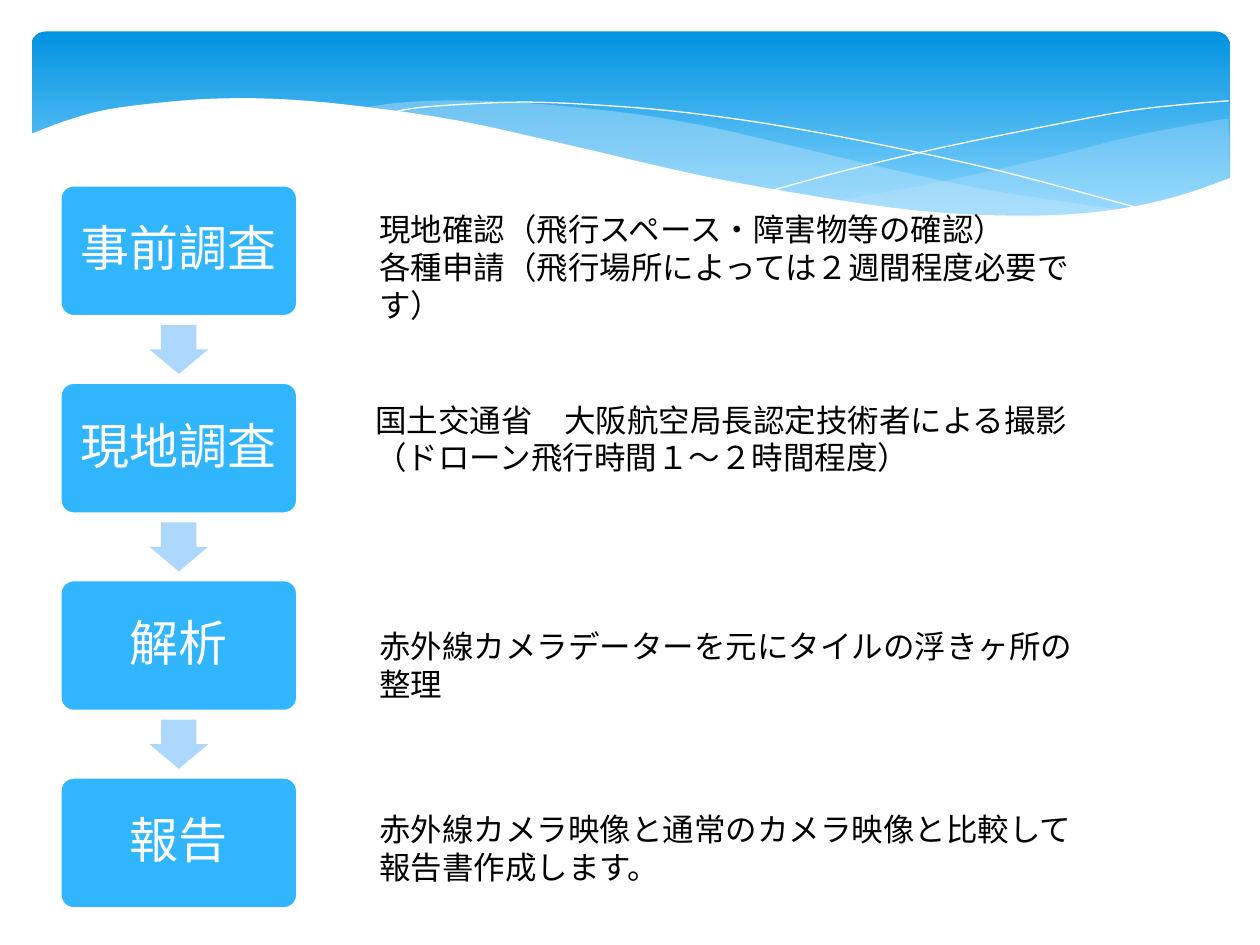
from pptx import Presentation
from pptx.dml.color import RGBColor
from pptx.enum.shapes import MSO_SHAPE as Preset
from pptx.enum.text import MSO_ANCHOR as Anchor, PP_ALIGN as Align
from pptx.oxml.ns import qn
from pptx.util import Pt
from lxml.etree import SubElement

WHITE = RGBColor(0xFF, 0xFF, 0xFF)
BLACK = RGBColor(0, 0, 0)
SKY_DARK = RGBColor(0x02, 0x93, 0xE0)
SKY_LIGHT = RGBColor(0x83, 0xD3, 0xFE)
MIST = RGBColor(0xC6, 0xE7, 0xFC)
STEP_BLUE = RGBColor(0x31, 0xB6, 0xFD)
ARROW_BLUE = RGBColor(0xAE, 0xD7, 0xFE)
FONT = "Calibri"

RIGHT_WAVE_TOP = [(684, 49.7), (655, 54.7), (623.5, 61.2), (581, 72),
                  (524, 85), (490, 91.4), (458, 97.2)]
RIGHT_WAVE_BOTTOM = [(458, 97.2), (489.6, 100.8), (527, 104.4), (568, 105.8),
                     (597, 104.4), (628, 100.8), (655, 94.3), (684.7, 83.5)]
MIDDLE_WAVE_TOP = [(625, 102.2), (584.6, 96.5), (540, 89.3), (490, 78.5),
                   (435, 65.5), (391.7, 55.4), (352, 48.2), (316.8, 43.9),
                   (284.4, 41), (255.6, 39.6), (229.7, 39.6), (207.4, 41),
                   (188, 43.9)]
MIDDLE_WAVE_BOTTOM = [(188, 43.9), (228, 49.7), (273, 58.3), (335.5, 72.7),
                      (389.5, 85), (438.5, 94.3), (482.4, 100.8), (530, 105.1),
                      (571, 106.6), (599, 105.1), (625, 102.2)]
LONG_LINE = [(204.5, 46.8), (218, 43.9), (243.4, 41.8), (281.5, 40.3),
             (319.7, 41.8), (365.8, 45.4), (419.8, 52.6), (482.4, 64.1),
             (554.4, 79.9), (635, 101.5)]
SHORT_LINE = [(423.4, 90.7), (465.8, 79.2), (520.6, 66.2), (584, 53.3),
              (626.4, 45.4), (657.4, 41.8), (684, 39.6)]
WHITE_WAVE = [(685.4, 83.5), (658.8, 92.9), (629.3, 100.1), (594, 104.4),
              (553, 105.1), (504.7, 102.2), (448.6, 94.3), (381.6, 82.1),
              (303.8, 64.1), (244.8, 51.1), (192, 43.2), (147.6, 38.9),
              (109.4, 38.2), (77, 40.3), (43.2, 44.6), (19.4, 51.1), (-1.4, 59)]
WHITE_BASE = [(-1.4, 143), (685.4, 143)]

STEPS = ["事前調査", "現地調査", "解析", "報告"]
DESCRIPTIONS = [
    (209.5, 116.6, 51, ["現地確認（飛行スペース・障害物等の確認）",
                        "各種申請（飛行場所によっては２週間程度必要です）"]),
    (207.4, 225.4, 72.7, ["国土交通省　大阪航空局長認定技術者による撮影",
                          "（ドローン飛行時間１～２時間程度）"]),
    (209.5, 355, 29, ["赤外線カメラデーターを元にタイルの浮きヶ所の整理"]),
    (209.5, 459.4, 51, ["赤外線カメラ映像と通常のカメラ映像と比較して報告書作成します。"]),
]


def smooth(knots, parts=4):
    padded = [knots[0], *knots, knots[-1]]
    points = [knots[0]]
    for before, start, end, after in zip(padded, padded[1:], padded[2:], padded[3:]):
        for part in range(1, parts + 1):
            t = part / parts
            points.append(tuple(
                b + (c - a) * t / 2 + (2 * a - 5 * b + 4 * c - d) * t ** 2 / 2
                + (3 * b - a - 3 * c + d) * t ** 3 / 2
                for a, b, c, d in zip(before, start, end, after)))
    return points


def add_outline(slide, left, top, points, close):
    placed = [(Pt(left + x), Pt(top + y)) for x, y in points]
    builder = slide.shapes.build_freeform(*placed[0])
    builder.add_line_segments(placed[1:], close=close)
    shape = builder.convert_to_shape()
    shape.shadow.inherit = False
    return shape


def add_area(slide, left, top, points, color, opacity=100):
    shape = add_outline(slide, left, top, points, True)
    paint(shape, color)
    if opacity < 100:
        color_element = shape.fill._xPr.find(qn("a:solidFill"))[0]
        SubElement(color_element, qn("a:alpha")).set("val", str(opacity * 1000))


def add_curve(slide, left, top, knots):
    shape = add_outline(slide, left, top, smooth(knots), False)
    shape.fill.background()
    shape.line.color.rgb = WHITE
    shape.line.width = Pt(0)


def paint(shape, color):
    shape.shadow.inherit = False
    shape.fill.solid()
    shape.fill.fore_color.rgb = color
    shape.line.fill.background()


def add_header(slide, left, top, width, height):
    band = slide.shapes.add_shape(Preset.ROUNDED_RECTANGLE, Pt(left), Pt(top),
                                  Pt(width), Pt(height))
    band.adjustments[0] = 0.07
    paint(band, SKY_DARK)
    band.fill.gradient()
    band.fill.gradient_angle = 270
    stops = zip(band.fill.gradient_stops, (0, 0.9), (SKY_DARK, SKY_LIGHT))
    for stop, position, color in stops:
        stop.position = position
        stop.color.rgb = color
    add_area(slide, left, top,
             smooth(RIGHT_WAVE_TOP) + smooth(RIGHT_WAVE_BOTTOM), MIST, 29)
    add_area(slide, left, top,
             smooth(MIDDLE_WAVE_TOP) + smooth(MIDDLE_WAVE_BOTTOM), MIST, 40)
    add_curve(slide, left, top, LONG_LINE)
    add_curve(slide, left, top, SHORT_LINE)
    add_area(slide, left, top, smooth(WHITE_WAVE) + WHITE_BASE, WHITE)


def write(paragraph, text, size, color):
    paragraph.text = text
    paragraph.font.size = Pt(size)
    paragraph.font.name = FONT
    paragraph.font.color.rgb = color


def add_process(slide, left, top, width, height):
    step_height, arrow_width, arrow_height = 74.6, 33.6, 28
    pitch = (height - step_height) / (len(STEPS) - 1)
    gap = (pitch - step_height - arrow_height) / 2
    for index, label in enumerate(STEPS):
        step_top = top + index * pitch
        step = slide.shapes.add_shape(Preset.ROUNDED_RECTANGLE, Pt(left), Pt(step_top),
                                      Pt(width), Pt(step_height))
        step.adjustments[0] = 0.1
        paint(step, STEP_BLUE)
        step.line.color.rgb = WHITE
        step.line.width = Pt(1.25)
        frame = step.text_frame
        frame.margin_left = frame.margin_right = Pt(8)
        frame.vertical_anchor = Anchor.MIDDLE
        paragraph = frame.paragraphs[0]
        write(paragraph, label, 28, WHITE)
        paragraph.alignment = Align.CENTER
        paragraph.line_spacing = 0.9
        if index < len(STEPS) - 1:
            arrow = slide.shapes.add_shape(
                Preset.DOWN_ARROW, Pt(left + (width - arrow_width) / 2),
                Pt(step_top + step_height + gap), Pt(arrow_width), Pt(arrow_height))
            arrow.adjustments[0] = 0.6
            arrow.adjustments[1] = 0.5
            paint(arrow, ARROW_BLUE)


def add_description(slide, left, top, width, height, lines):
    box = slide.shapes.add_textbox(Pt(left), Pt(top), Pt(width), Pt(height))
    frame = box.text_frame
    frame.word_wrap = True
    for index, line in enumerate(lines):
        paragraph = frame.add_paragraph() if index else frame.paragraphs[0]
        write(paragraph, line, 18, BLACK)


def main():
    presentation = Presentation()
    presentation.slide_width = Pt(720)
    presentation.slide_height = Pt(540)
    slide = presentation.slides.add_slide(presentation.slide_layouts[6])
    add_header(slide, 18, 18, 684.7, 112.3)
    add_process(slide, 34.6, 106, 135.2, 413)
    for left, top, height, lines in DESCRIPTIONS:
        add_description(slide, left, top, 425.5, height, lines)
    presentation.save("out.pptx")


if __name__ == "__main__":
    main()
